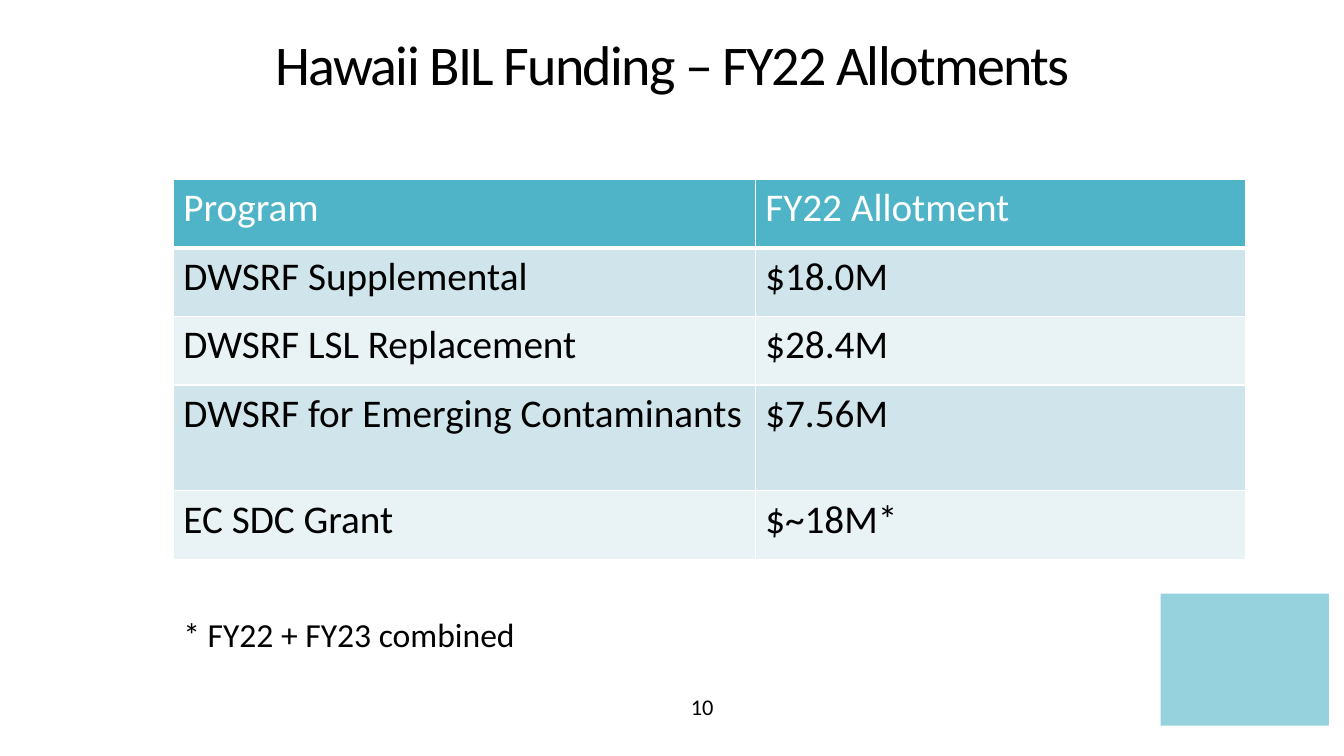
import lxml.etree
import pptx
import pptx.dml.color
import pptx.enum.shapes
import pptx.enum.text
import pptx.oxml.ns
import pptx.util

SLIDE_WIDTH = pptx.util.Inches(13.33)
SLIDE_HEIGHT = pptx.util.Inches(7.5)
FONT = "Calibri"
COLORS = {
    "ink": "000000",
    "paper": "FFFFFF",
    "header": "50B4C8",
    "band_dark": "D0E5EB",
    "band_light": "E9F2F5",
    "accent": "96D2DE",
}
ALIGN = pptx.enum.text.PP_ALIGN
ANCHOR = pptx.enum.text.MSO_ANCHOR

# Lengths below are percentages of the slide's size
TABLE_LEFT = 12.9
COLUMN_WIDTHS = (43.29, 36.46)
ROW_HEIGHT = 9.07
TALL_ROW_HEIGHT = 14
ALLOTMENTS = [
    ("Program", "FY22 Allotment"),
    ("DWSRF Supplemental", "$18.0M"),
    ("DWSRF LSL Replacement", "$28.4M"),
    ("DWSRF for Emerging Contaminants", "$7.56M"),
    ("EC SDC Grant", "$~18M*"),
]
TALL_ROW = 3


def across(percent):
    return round(SLIDE_WIDTH * percent / 100)


def down(percent):
    return round(SLIDE_HEIGHT * percent / 100)


def place(left, top, width, height):
    return across(left), down(top), across(width), down(height)


def rgb(name):
    return pptx.dml.color.RGBColor.from_string(COLORS[name])


def write_text(frame, text, size, color="ink", align=ALIGN.LEFT,
               line_spacing=None, tracking=None):
    paragraph = frame.paragraphs[0]
    paragraph.alignment = align
    paragraph.line_spacing = line_spacing
    run = paragraph.add_run()
    run.text = text
    run.font.name = FONT
    run.font.size = pptx.util.Pt(size)
    run.font.color.rgb = rgb(color)
    if tracking is not None:
        run._r.get_or_add_rPr().set("spc", str(round(tracking * 100)))


def add_text_box(slide, box, text, size, anchor=ANCHOR.TOP, inset=0.05, **text_format):
    frame = slide.shapes.add_textbox(*place(*box)).text_frame
    frame.word_wrap = True
    frame.vertical_anchor = anchor
    frame.margin_top = frame.margin_bottom = pptx.util.Inches(inset)
    write_text(frame, text, size, **text_format)


def add_rectangle(slide, box, color):
    shape = slide.shapes.add_shape(pptx.enum.shapes.MSO_SHAPE.RECTANGLE, *place(*box))
    shape.shadow.inherit = False
    shape.fill.solid()
    shape.fill.fore_color.rgb = rgb(color)
    shape.line.fill.background()
    return shape


def add_borders(cell, bottom_width):
    properties = cell._tc.get_or_add_tcPr()
    qn = pptx.oxml.ns.qn
    for side, width in (("L", 1), ("R", 1), ("T", 1), ("B", bottom_width)):
        line = lxml.etree.SubElement(properties, qn(f"a:ln{side}"),
                                     w=str(pptx.util.Pt(width)))
        fill = lxml.etree.SubElement(line, qn("a:solidFill"))
        lxml.etree.SubElement(fill, qn("a:srgbClr"), val=COLORS["paper"])


def add_allotment_table(slide):
    heights = [ROW_HEIGHT] * len(ALLOTMENTS)
    heights[TALL_ROW] = TALL_ROW_HEIGHT
    box = (TABLE_LEFT, 23.73, sum(COLUMN_WIDTHS), sum(heights))
    table = slide.shapes.add_table(
        len(ALLOTMENTS), len(COLUMN_WIDTHS), *place(*box)).table
    for column, width in zip(table.columns, COLUMN_WIDTHS):
        column.width = across(width)
    for row, height in zip(table.rows, heights):
        row.height = down(height)
    for row_index, values in enumerate(ALLOTMENTS):
        is_header = row_index == 0
        band = "band_dark" if row_index % 2 else "band_light"
        for column_index, text in enumerate(values):
            cell = table.cell(row_index, column_index)
            add_borders(cell, bottom_width=3 if is_header else 1)
            cell.fill.solid()
            cell.fill.fore_color.rgb = rgb("header" if is_header else band)
            write_text(cell.text_frame, text, 28,
                       color="paper" if is_header else "ink")


def main():
    presentation = pptx.Presentation()
    presentation.slide_width = SLIDE_WIDTH
    presentation.slide_height = SLIDE_HEIGHT
    slide = presentation.slides.add_slide(presentation.slide_layouts[6])

    # Title
    add_text_box(slide, (9.68, 4, 80.72, 11.2), "Hawaii BIL Funding – FY22 Allotments",
                 40, inset=0.1, align=ALIGN.CENTER, line_spacing=0.85, tracking=-1.2)

    # Corner block and table
    add_rectangle(slide, (86.35, 78.53, 12.53, 17.47), "accent")
    add_allotment_table(slide)

    # Footnote
    footnote = add_rectangle(slide, (TABLE_LEFT, 80.53, 70.82, 6.67), "paper")
    footnote.text_frame.word_wrap = True
    footnote.text_frame.vertical_anchor = ANCHOR.TOP
    write_text(footnote.text_frame, "* FY22 + FY23 combined", 24)

    # Page number
    add_text_box(slide, (45.91, 89.33, 12.68, 8.13), "10", 16,
                 anchor=ANCHOR.MIDDLE, align=ALIGN.CENTER)

    presentation.save("out.pptx")


if __name__ == "__main__":
    main()
